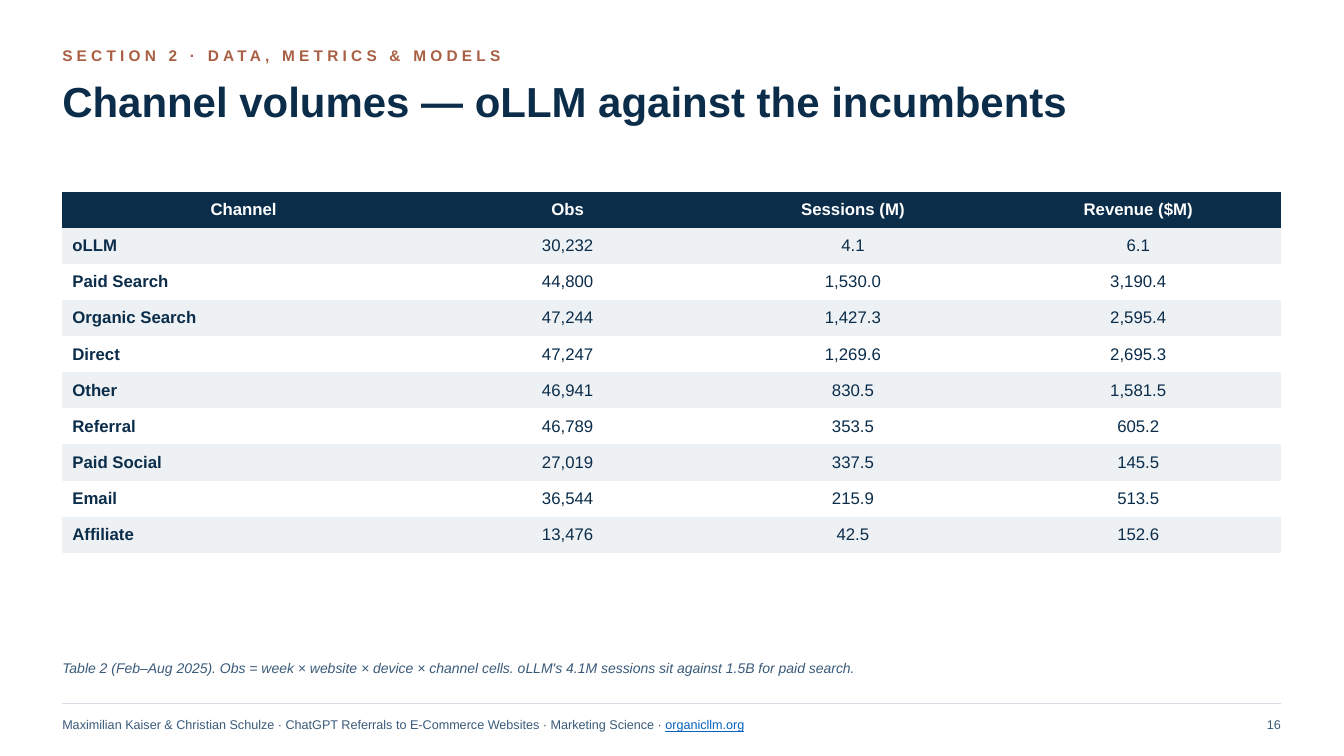
import pptx
import pptx.dml.color
import pptx.enum.shapes
import pptx.enum.text
import pptx.oxml.ns
import pptx.util
from lxml import etree

Cm = pptx.util.Cm
Pt = pptx.util.Pt
RGBColor = pptx.dml.color.RGBColor
PP_ALIGN = pptx.enum.text.PP_ALIGN
MSO_ANCHOR = pptx.enum.text.MSO_ANCHOR
qn = pptx.oxml.ns.qn

NAVY = RGBColor(0x0B, 0x2D, 0x4A)
RUST = RGBColor(0xA8, 0x5F, 0x43)
SLATE = RGBColor(0x3A, 0x5A, 0x7A)
LINK = RGBColor(0x05, 0x63, 0xC1)
RULE = RGBColor(0xD7, 0xDE, 0xE5)
BAND = RGBColor(0xEE, 0xF1, 0xF4)
WHITE = RGBColor(0xFF, 0xFF, 0xFF)

LEFT = 1.57
WIDTH = 30.71
NO_STYLE = "{2D5ABB26-0587-4C30-8999-92F81FD0307C}"


def set_font(font, size, color, bold=False, italic=False):
    font.name = "Arial"
    font.size = Pt(size)
    font.color.rgb = color
    font.bold = bold
    font.italic = italic


def add_text(left, top, width, height, text, anchor):
    tf = slide.shapes.add_textbox(Cm(left), Cm(top), Cm(width), Cm(height)).text_frame
    tf.margin_left = tf.margin_top = tf.margin_right = tf.margin_bottom = 0
    tf.word_wrap = True
    tf.vertical_anchor = anchor
    p = tf.paragraphs[0]
    p.add_run().text = text
    return p


prs = pptx.Presentation()
prs.slide_width = Cm(33.87)
prs.slide_height = Cm(19.05)
slide = prs.slides.add_slide(prs.slide_layouts[6])

p = add_text(LEFT, 1.02, WIDTH, 0.76, "SECTION 2 · DATA, METRICS & MODELS", MSO_ANCHOR.MIDDLE)
set_font(p.font, 11, RUST, bold=True)
p.runs[0]._r.get_or_add_rPr().set("spc", "300")

p = add_text(LEFT, 1.88, WIDTH, 2.41, "Channel volumes — oLLM against the incumbents", MSO_ANCHOR.TOP)
p.line_spacing = 1.02
set_font(p.font, 30, NAVY, bold=True)

rows = [
    ("Channel", "Obs", "Sessions (M)", "Revenue ($M)"),
    ("oLLM", "30,232", "4.1", "6.1"),
    ("Paid Search", "44,800", "1,530.0", "3,190.4"),
    ("Organic Search", "47,244", "1,427.3", "2,595.4"),
    ("Direct", "47,247", "1,269.6", "2,695.3"),
    ("Other", "46,941", "830.5", "1,581.5"),
    ("Referral", "46,789", "353.5", "605.2"),
    ("Paid Social", "27,019", "337.5", "145.5"),
    ("Email", "36,544", "215.9", "513.5"),
    ("Affiliate", "13,476", "42.5", "152.6"),
]
row_height = 0.91
table = slide.shapes.add_table(
    len(rows), len(rows[0]), Cm(LEFT), Cm(4.83), Cm(WIDTH), Cm(row_height * len(rows))
).table
table._tbl.tblPr.find(qn("a:tableStyleId")).text = NO_STYLE
table.horz_banding = False
for column, width in zip(table.columns, (9.14, 7.19, 7.19, 7.19)):
    column.width = Cm(width)

for i, values in enumerate(rows):
    table.rows[i].height = Cm(row_height)
    header = i == 0
    for j, value in enumerate(values):
        cell = table.cell(i, j)
        cell.fill.solid()
        cell.fill.fore_color.rgb = NAVY if header else BAND if i % 2 else WHITE
        cell.vertical_anchor = MSO_ANCHOR.MIDDLE
        p = cell.text_frame.paragraphs[0]
        p.add_run().text = value
        p.alignment = PP_ALIGN.CENTER if header or j else PP_ALIGN.LEFT
        set_font(p.font, 12, WHITE if header else NAVY, bold=header or j == 0)

p = add_text(
    LEFT, 16.61, WIDTH, 1.02,
    "Table 2 (Feb–Aug 2025). Obs = week × website × device × channel cells. "
    "oLLM's 4.1M sessions sit against 1.5B for paid search.",
    MSO_ANCHOR.TOP,
)
set_font(p.font, 10, SLATE, italic=True)

rule = slide.shapes.add_connector(
    pptx.enum.shapes.MSO_CONNECTOR.STRAIGHT, Cm(LEFT), Cm(17.73), Cm(LEFT + WIDTH), Cm(17.73)
)
rule.line.color.rgb = RULE
rule.line.width = Pt(0.5)
etree.SubElement(rule._element.spPr, qn("a:effectLst"))

p = add_text(
    LEFT, 17.88, 28.17, 0.76,
    "Maximilian Kaiser & Christian Schulze · ChatGPT Referrals to E-Commerce Websites · Marketing Science · ",
    MSO_ANCHOR.MIDDLE,
)
r = p.add_run()
r.text = "organicllm.org"
r.font.underline = True
for run, color in zip(p.runs, (SLATE, LINK)):
    set_font(run.font, 9, color)

p = add_text(29.74, 17.88, 2.54, 0.76, "16", MSO_ANCHOR.MIDDLE)
p.alignment = PP_ALIGN.RIGHT
set_font(p.font, 9, SLATE)

prs.save("out.pptx")
